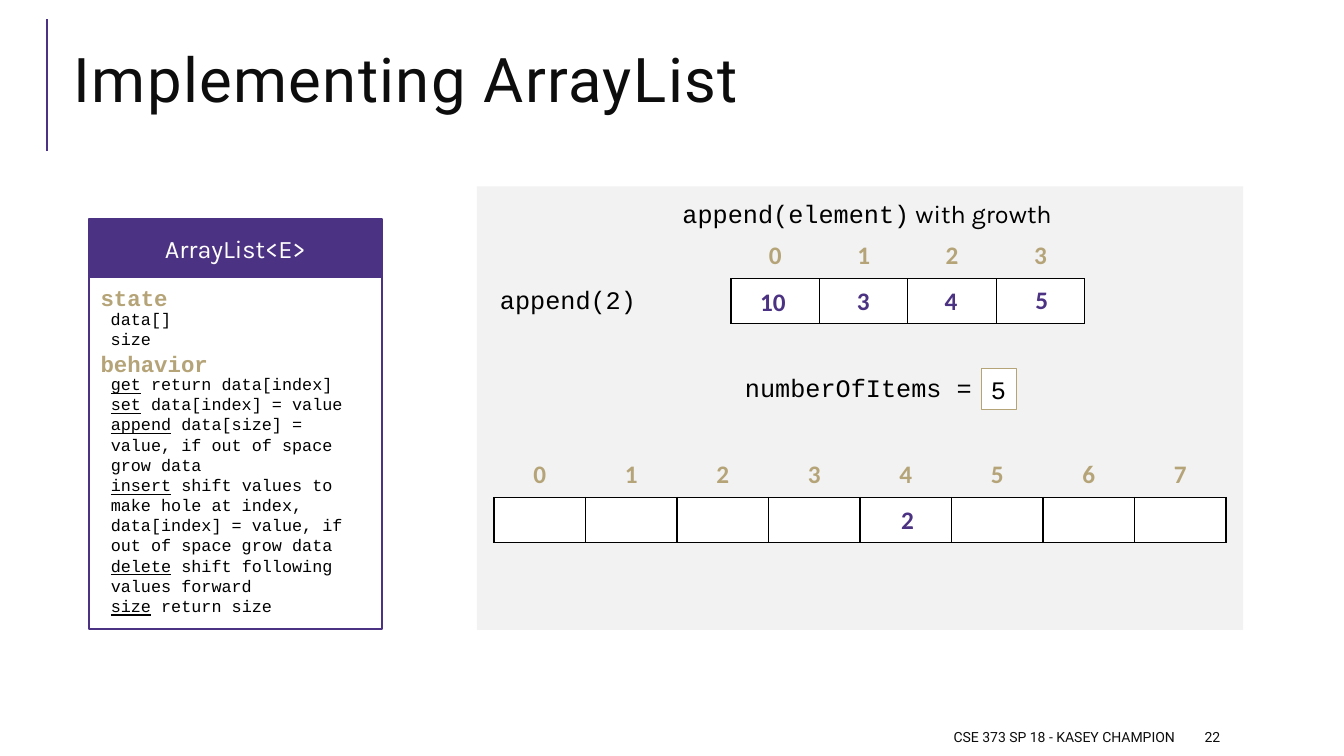
from lxml import etree
from pptx import Presentation
from pptx import util as u
from pptx.dml.color import RGBColor
from pptx.enum import shapes, text
from pptx.oxml.ns import qn

PURPLE, GOLD, GRAY = "4C3282", "B6A479", "F2F2F2"
BLACK, INK, WHITE = "000000", "0D0D0D", "FFFFFF"
MONO, SANS, HEAD, DIGITS = "Courier New", "Karla", "Roboto", "Calibri"
LEFT, CENTER, RIGHT = text.PP_ALIGN.LEFT, text.PP_ALIGN.CENTER, text.PP_ALIGN.RIGHT
TOP, MIDDLE = text.MSO_ANCHOR.TOP, text.MSO_ANCHOR.MIDDLE
NO_STYLE = "{2D5ABB26-0587-4C30-8999-92F81FD0307C}"

TITLE = "Implementing ArrayList"
FOOTER, PAGE = "CSE 373 SP 18 - KASEY CHAMPION", "22"
CLASS_NAME = "ArrayList<E>"
STATE = ["data[]", "size"]
BEHAVIOR = [
    ("get", " return data[index]"),
    ("set", " data[index] = value"),
    ("append", " data[size] = value, if out of space grow data"),
    ("insert", " shift values to make hole at index, data[index] = value, if out of space grow data"),
    ("delete", " shift following values forward"),
    ("size", " return size"),
]
OLD_SIZE, NEW_SIZE = 4, 8
# Movable values: text, left, top, width
OLD_VALUES = [("10", 7.44, 2.79, 0.47), ("3", 8.4, 2.78, 0.34),
              ("4", 9.27, 2.78, 0.34), ("5", 10.17, 2.77, 0.34)]
APPENDED = "2"
ITEM_COUNT = "5"

CARD_LEFT, CARD_TOP, CARD_WIDTH = 0.88, 2.17, 2.91
HEADER_HEIGHT, BODY_HEIGHT = 0.58, 3.49
PANEL = (4.73, 1.85, 7.6, 4.4)
ROW_HEIGHT, LINE_HEIGHT = 0.445, 0.4

prs = Presentation()
prs.slide_width, prs.slide_height = u.Inches(13.33), u.Inches(7.5)
slide = prs.slides.add_slide(prs.slide_layouts[5])


def rgb(color):
    return RGBColor.from_string(color)


def inches(box):
    return [u.Inches(length) for length in box]


def style(paragraph, size, face, color, bold=False, align=LEFT):
    font = paragraph.font
    font.size, font.name, font.bold = u.Pt(size), face, bold
    font.color.rgb = rgb(color)
    paragraph.alignment = align


def write(frame, lines, size, face, color, bold=False, align=LEFT, anchor=TOP, wrap=True):
    """Each line is a string, or a tuple of strings that become runs."""
    frame.word_wrap, frame.vertical_anchor = wrap, anchor
    for number, line in enumerate(lines):
        paragraph = frame.add_paragraph() if number else frame.paragraphs[0]
        style(paragraph, size, face, color, bold, align)
        for part in (line if isinstance(line, tuple) else (line,)):
            paragraph.add_run().text = part
    return frame


def label(box, lines, *look, **options):
    return write(slide.shapes.add_textbox(*inches(box)).text_frame, lines, *look, **options)


def rectangle(box, fill, line=None, width=1.25):
    shape = slide.shapes.add_shape(shapes.MSO_SHAPE.RECTANGLE, *inches(box))
    shape.shadow.inherit = False
    shape.fill.solid()
    shape.fill.fore_color.rgb = rgb(fill)
    if line:
        shape.line.color.rgb = rgb(line)
        shape.line.width = u.Pt(width)
    else:
        shape.line.fill.background()
    return shape


def add_border(cell, side):
    edge = etree.SubElement(cell._tc.get_or_add_tcPr(), qn(f"a:ln{side}"), w=str(u.Pt(1)))
    solid = etree.SubElement(edge, qn("a:solidFill"))
    etree.SubElement(solid, qn("a:srgbClr"), val=BLACK)


def array_table(left, top, width, size):
    """Row of indices above a row of bordered empty boxes."""
    table = slide.shapes.add_table(
        2, size, *inches((left, top, width, 2 * ROW_HEIGHT))).table
    table.first_row = table.horz_banding = False
    table._tbl.tblPr.find(qn("a:tableStyleId")).text = NO_STYLE
    for column in table.columns:
        column.width = u.Inches(width / size)
    for index in range(size):
        above, box = table.cell(0, index), table.cell(1, index)
        above.vertical_anchor = MIDDLE
        above.text = str(index)
        style(above.text_frame.paragraphs[0], 18, DIGITS, GOLD, True, CENTER)
        add_border(above, "B")
        above.fill.background()
        for side in "LRTB":
            add_border(box, side)
        box.fill.solid()
        box.fill.fore_color.rgb = rgb(WHITE)


# Title, accent line and footer
title = slide.shapes.title
title.left, title.top, title.width, title.height = inches((0.63, 0.29, 12.23, 1.11))
write(title.text_frame, [TITLE], 44, HEAD, INK, anchor=MIDDLE)
title.text_frame.auto_size = text.MSO_AUTO_SIZE.NONE
heading = title.text_frame.paragraphs[0]
heading.line_spacing = 0.8
heading.runs[0].font._element.set("spc", "100")

accent = slide.shapes.add_connector(
    shapes.MSO_CONNECTOR.STRAIGHT, *inches((0.47, 1.5, 0.47, 0.19)))
accent.line.color.rgb = rgb(PURPLE)
accent.line.width = u.Pt(1.5)
etree.SubElement(accent._element.spPr, qn("a:effectLst"))

label((5.3, 7.16, 6.45, 0.3), [FOOTER], 10, HEAD, INK, align=RIGHT, anchor=MIDDLE)
label((11.85, 7.16, 1.06, 0.3), [PAGE], 10, HEAD, INK, anchor=MIDDLE)

# Class card
rectangle((CARD_LEFT, CARD_TOP + HEADER_HEIGHT, CARD_WIDTH, BODY_HEIGHT), WHITE, PURPLE)
header = rectangle((CARD_LEFT, CARD_TOP, CARD_WIDTH, HEADER_HEIGHT), PURPLE, PURPLE)
write(header.text_frame, [CLASS_NAME], 18, SANS, WHITE, align=CENTER, anchor=MIDDLE)
for section, top in (("state", 2.77), ("behavior", 3.42)):
    label((0.9, top, 2.23, 0.37), [section], 16, MONO, GOLD, bold=True)
label((1, 3.01, 2.23, 0.5), STATE, 12, MONO, BLACK)
methods = label((1, 3.66, 2.79, 2.73), BEHAVIOR, 12, MONO, BLACK)
for method in methods.paragraphs:
    method.runs[0].font.underline = True

# Growth example
rectangle(PANEL, GRAY)
caption = label((6.67, 1.92, 3.95, LINE_HEIGHT), [("append(element)", " with growth")],
                18, MONO, BLACK)
caption.paragraphs[0].runs[1].font.name = SANS
array_table(7.25, 2.32, 3.51, OLD_SIZE)
for value, left, top, width in OLD_VALUES:
    label((left, top, width, LINE_HEIGHT), [value], 18, DIGITS, PURPLE, bold=True, wrap=False)
label((4.86, 2.77, 2.26, LINE_HEIGHT), ["append(2)"], 18, MONO, BLACK)
label((7.29, 3.64, 2.61, LINE_HEIGHT), ["numberOfItems ="], 18, MONO, BLACK, wrap=False)
counter = rectangle((9.73, 3.66, 0.35, LINE_HEIGHT), WHITE, GOLD, 0.75)
write(counter.text_frame, [ITEM_COUNT], 18, MONO, BLACK, wrap=False)
array_table(4.9, 4.49, 7.26, NEW_SIZE)
appended = rectangle((8.84, 4.95, 0.34, LINE_HEIGHT), WHITE)
write(appended.text_frame, [APPENDED], 18, DIGITS, PURPLE, bold=True, wrap=False)

prs.save("out.pptx")
